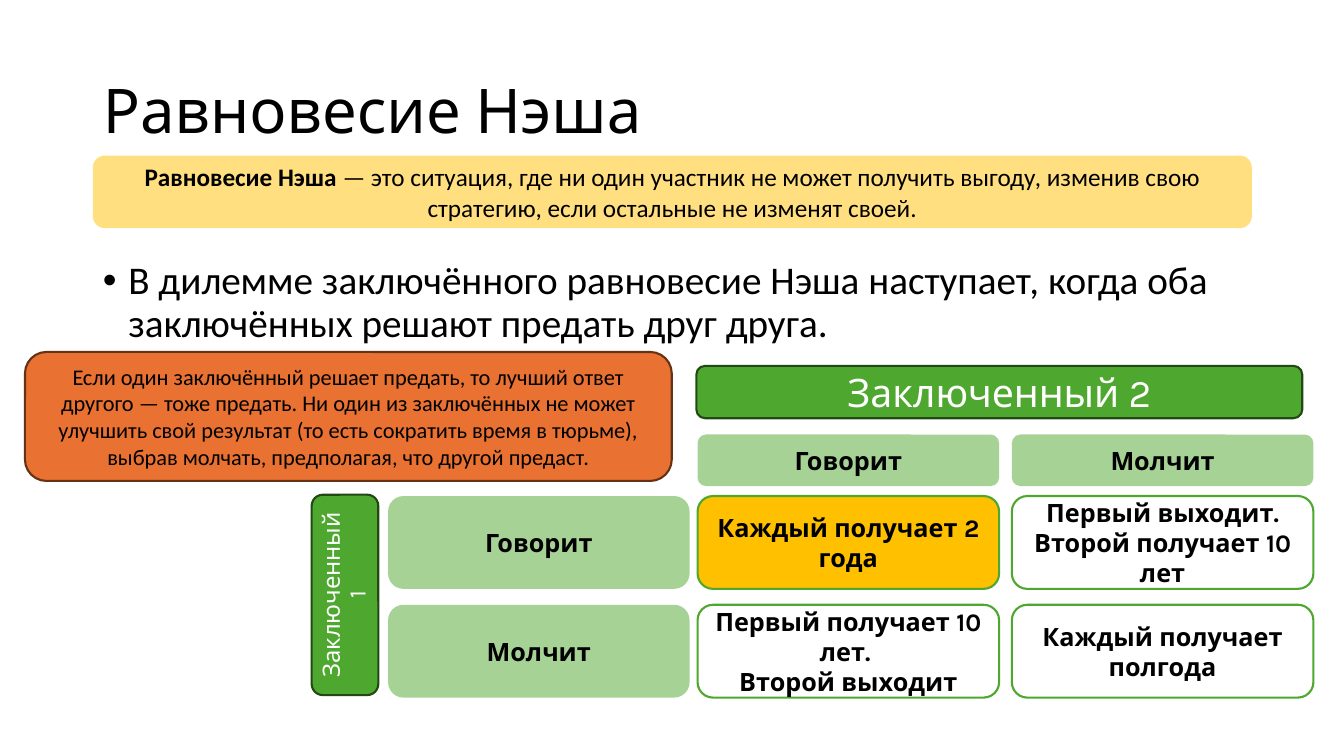
from lxml.etree import SubElement
from pptx import Presentation
from pptx.dml.color import RGBColor
from pptx.enum.shapes import MSO_SHAPE
from pptx.enum.text import MSO_ANCHOR, PP_ALIGN
from pptx.oxml.ns import qn
from pptx.util import Cm, Pt

BLACK = RGBColor(0x00, 0x00, 0x00)
WHITE = RGBColor(0xFF, 0xFF, 0xFF)
GREEN = RGBColor(0x4E, 0xA7, 0x2E)
DARK_GREEN = RGBColor(0x22, 0x49, 0x14)
GOLD = RGBColor(0xFF, 0xC0, 0x00)
ORANGE = RGBColor(0xE9, 0x71, 0x32)
BROWN = RGBColor(0x66, 0x32, 0x16)

TITLE = "Равновесие Нэша"
BODY = "В дилемме заключённого равновесие Нэша наступает, когда оба заключённых решают предать друг друга."
DEFINITION = " — это ситуация, где ни один участник не может получить выгоду, изменив свою стратегию, если остальные не изменят своей."
REASON = "Если один заключённый решает предать, то лучший ответ другого — тоже предать. Ни один из заключённых не может улучшить свой результат (то есть сократить время в тюрьме), выбрав молчать, предполагая, что другой предаст."
PLAYERS = ("Заключенный 1", "Заключенный 2")
MOVES = ("Говорит", "Молчит")
OUTCOMES = (
    ("Каждый получает 2 года", "Первый выходит. Второй получает 10 лет"),
    ("Первый получает 10 лет. \nВторой выходит", "Каждый получает полгода"),
)
EQUILIBRIUM = (0, 0)

LEFT, WIDTH = 2.34, 29.21
MOVE_LEFT = 9.78
COLS = (17.58, 25.5)
HEADER_TOP, HEADER_H = 10.95, 1.3
ROWS = (12.5, 15.24)
CELL_W, CELL_H = 7.6, 2.34


def place(sp, left, top, width, height):
    """Position a shape by centimetres."""
    sp.left, sp.top, sp.width, sp.height = map(Cm, (left, top, width, height))


def add_box(s, box, text, fill, line=None, size=18, font="Karla",
            color=BLACK, bold=False, alpha=None):
    """Add a rounded box with centred text."""
    sp = s.shapes.add_shape(MSO_SHAPE.ROUNDED_RECTANGLE, *map(Cm, box))
    sp.shadow.inherit = False
    sp.fill.solid()
    sp.fill.fore_color.rgb = fill
    if alpha:
        clr = sp.fill._xPr.find(qn("a:solidFill"))[0]
        SubElement(clr, qn("a:alpha")).set("val", str(alpha * 1000))
    if line is None:
        sp.line.fill.background()
    else:
        sp.line.color.rgb = line
        sp.line.width = Pt(1.5)
    tf = sp.text_frame
    tf.word_wrap = True
    tf.vertical_anchor = MSO_ANCHOR.MIDDLE
    p = tf.paragraphs[0]
    p.text = text
    p.alignment = PP_ALIGN.CENTER
    p.font.name, p.font.size, p.font.bold = font, Pt(size), bold
    p.font.color.rgb = color
    return sp


def fill_placeholders(s):
    """Fill the title and the bulleted body."""
    title, body = s.shapes.title, s.placeholders[1]
    place(title, LEFT, 1.02, WIDTH, 3.68)
    place(body, LEFT, 6.45, WIDTH, 10.39)
    for sp, text, font, size in ((title, TITLE, "Karla", 44), (body, BODY, "Calibri", 28)):
        p = sp.text_frame.paragraphs[0]
        p.text = text
        p.alignment = PP_ALIGN.LEFT
        p.line_spacing = 0.9
        p.font.name, p.font.size = font, Pt(size)
        p.font.color.rgb = BLACK
    p.space_before = Pt(10)
    pPr = p._p.get_or_add_pPr()
    pPr.set("marL", str(Cm(0.64)))
    pPr.set("indent", str(Cm(-0.64)))


def add_matrix(s):
    """Add the players, their moves and the outcomes."""
    player = dict(fill=GREEN, line=DARK_GREEN, color=WHITE)
    move = dict(fill=GREEN, alpha=50, bold=True)
    add_box(s, (17.55, 9.22, 15.27, 1.32), PLAYERS[1], size=28, **player)
    sp = add_box(s, (6.17, 14.15, 5.05, 1.68), PLAYERS[0], size=17, **player)
    sp.rotation = 270
    p = sp.text_frame.paragraphs[0]
    p.line_spacing, p.space_before = 0.9, Pt(10)
    for text, left in zip(MOVES, COLS):
        add_box(s, (left, HEADER_TOP, CELL_W, HEADER_H), text, **move)
    for i, top in enumerate(ROWS):
        add_box(s, (MOVE_LEFT, top, CELL_W, CELL_H), MOVES[i], **move)
        for j, left in enumerate(COLS):
            fill = GOLD if (i, j) == EQUILIBRIUM else WHITE
            add_box(s, (left, top, CELL_W, CELL_H), OUTCOMES[i][j], fill, GREEN, bold=True)


def main():
    """Build and save the slide."""
    prs = Presentation()
    prs.slide_width, prs.slide_height = Cm(33.87), Cm(19.05)
    s = prs.slides.add_slide(prs.slide_layouts[1])
    fill_placeholders(s)
    sp = add_box(s, (LEFT, 3.92, WIDTH, 1.83), "", GOLD, font="Calibri", alpha=50)
    p = sp.text_frame.paragraphs[0]
    for text, bold in ((TITLE, True), (DEFINITION, False)):
        r = p.add_run()
        r.text = text
        r.font.bold = bold
    add_matrix(s)
    add_box(s, (0.63, 8.87, 16.3, 3.25), REASON, ORANGE, BROWN, 16, "Calibri")
    prs.save("out.pptx")


if __name__ == "__main__":
    main()
